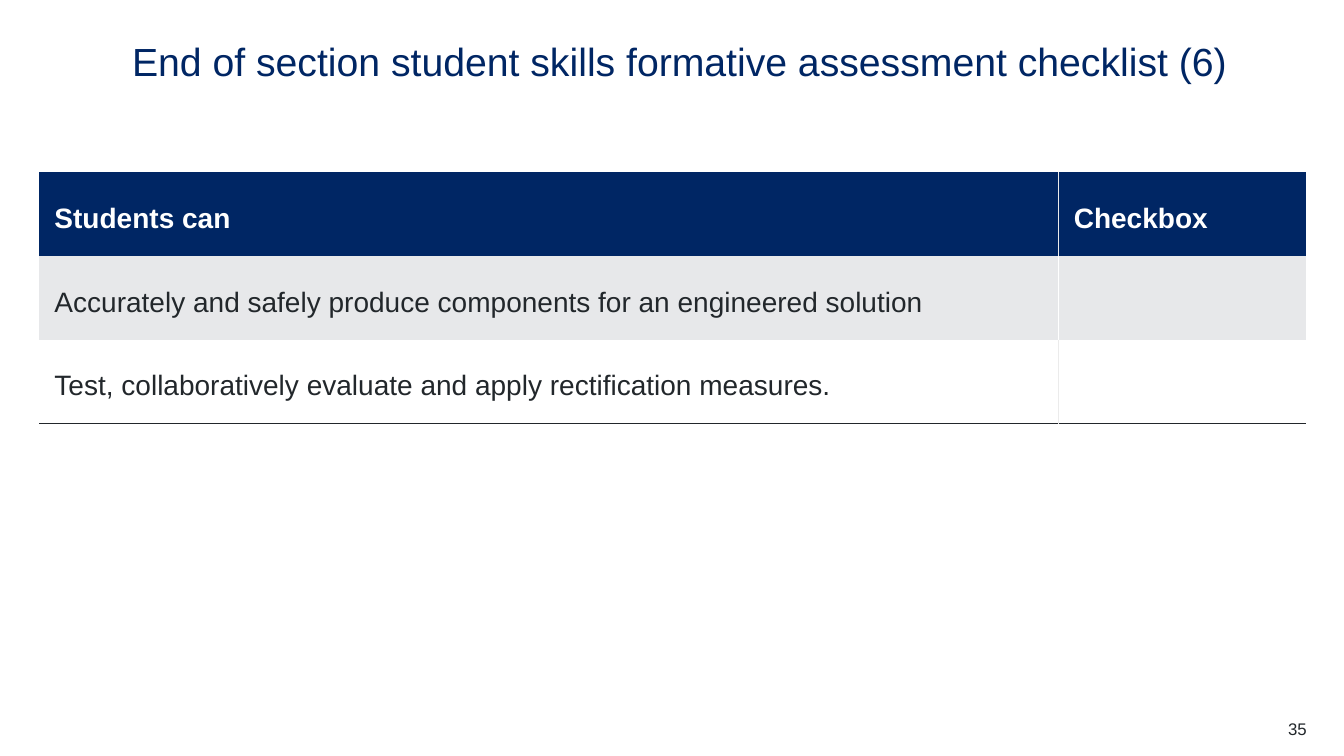
import dataclasses

import lxml.etree
import pptx
import pptx.dml.color
import pptx.enum.text
import pptx.oxml.ns
import pptx.util

Inches = pptx.util.Inches
Pt = pptx.util.Pt
PP_ALIGN = pptx.enum.text.PP_ALIGN
MSO_ANCHOR = pptx.enum.text.MSO_ANCHOR
qn = pptx.oxml.ns.qn

FONT = "Arial"
NAVY = "002664"
INK = "22272B"
WHITE = "FFFFFF"
GREY = "E7E8EA"
DIVIDER = "EBEBEB"
PLAIN_TABLE_STYLE = "{2D5ABB26-0587-4C30-8999-92F81FD0307C}"
COLUMN_WIDTHS = (10.11, 2.45)
ROW_HEIGHT = 0.83
CELL_MARGIN = 0.15


@dataclasses.dataclass
class ChecklistRow:
    texts: tuple[str, str]
    fill: str
    color: str = INK
    bold: bool = False
    divider: str = DIVIDER
    bottom: str | None = None


ROWS = [
    ChecklistRow(("Students can", "Checkbox"), NAVY, WHITE, bold=True),
    ChecklistRow(("Accurately and safely produce components for an engineered solution", ""),
                 GREY, divider=WHITE),
    ChecklistRow(("Test, collaboratively evaluate and apply rectification measures.", ""),
                 WHITE, bottom=INK),
]


def rgb(value: str) -> pptx.dml.color.RGBColor:
    return pptx.dml.color.RGBColor.from_string(value)


def set_text(tf, text: str, size: float, color: str, bold: bool = False):
    tf.text = text
    p = tf.paragraphs[0]
    for r in p.runs:
        r.font.name = FONT
        r.font.size = Pt(size)
        r.font.bold = bold
        r.font.color.rgb = rgb(color)
    return p


def format_frame(tf) -> None:
    tf.margin_left = tf.margin_top = tf.margin_right = tf.margin_bottom = 0
    tf.word_wrap = True
    tf.auto_size = pptx.enum.text.MSO_AUTO_SIZE.NONE
    tf.vertical_anchor = MSO_ANCHOR.TOP


def add_border(cell, side: str, color: str) -> None:
    tc_pr = cell._tc.get_or_add_tcPr()
    ln = lxml.etree.SubElement(tc_pr, qn(f"a:{side}"), w=str(Pt(1)))
    fill = lxml.etree.SubElement(ln, qn("a:solidFill"))
    lxml.etree.SubElement(fill, qn("a:srgbClr"), val=color)


def add_title(slide, text: str) -> None:
    sp = slide.shapes.title
    sp.left, sp.top, sp.width, sp.height = map(Inches, (1.31, 0.42, 11.64, 0.48))
    format_frame(sp.text_frame)
    p = set_text(sp.text_frame, text, 28, NAVY)
    p.alignment = PP_ALIGN.LEFT
    p.line_spacing = 0.9


def format_cell(cell, text: str, column: int, row: ChecklistRow) -> None:
    cell.margin_left = cell.margin_right = Inches(CELL_MARGIN)
    cell.margin_top = cell.margin_bottom = Inches(CELL_MARGIN)
    if text:
        p = set_text(cell.text_frame, text, 20, row.color, row.bold)
        p.line_spacing = 1.5
        p.space_before = Pt(12)
        p.space_after = Pt(6)
    add_border(cell, "lnL" if column else "lnR", row.divider)
    if row.bottom:
        add_border(cell, "lnB", row.bottom)
    cell.fill.solid()
    cell.fill.fore_color.rgb = rgb(row.fill)


def add_checklist(slide, rows: list[ChecklistRow]) -> None:
    frame = slide.shapes.add_table(
        len(rows), len(COLUMN_WIDTHS), Inches(0.39), Inches(1.71),
        Inches(sum(COLUMN_WIDTHS)), Inches(ROW_HEIGHT * len(rows)))
    table = frame.table
    table._tbl.tblPr.find(qn("a:tableStyleId")).text = PLAIN_TABLE_STYLE
    for column, width in zip(table.columns, COLUMN_WIDTHS):
        column.width = Inches(width)
    for i, row in enumerate(rows):
        table.rows[i].height = Inches(ROW_HEIGHT)
        for j, text in enumerate(row.texts):
            format_cell(table.cell(i, j), text, j, row)


def add_page_number(slide, number: str) -> None:
    sp = slide.shapes.add_textbox(Inches(12.17), Inches(7.13), Inches(0.79), Inches(0.2))
    format_frame(sp.text_frame)
    p = set_text(sp.text_frame, number, 12, INK)
    p.alignment = PP_ALIGN.RIGHT


def main() -> None:
    prs = pptx.Presentation()
    prs.slide_width = Inches(13.33)
    prs.slide_height = Inches(7.5)
    slide = prs.slides.add_slide(prs.slide_layouts[5])
    add_title(slide, "End of section student skills formative assessment checklist (6)")
    add_checklist(slide, ROWS)
    add_page_number(slide, "35")
    prs.save("out.pptx")


if __name__ == "__main__":
    main()
